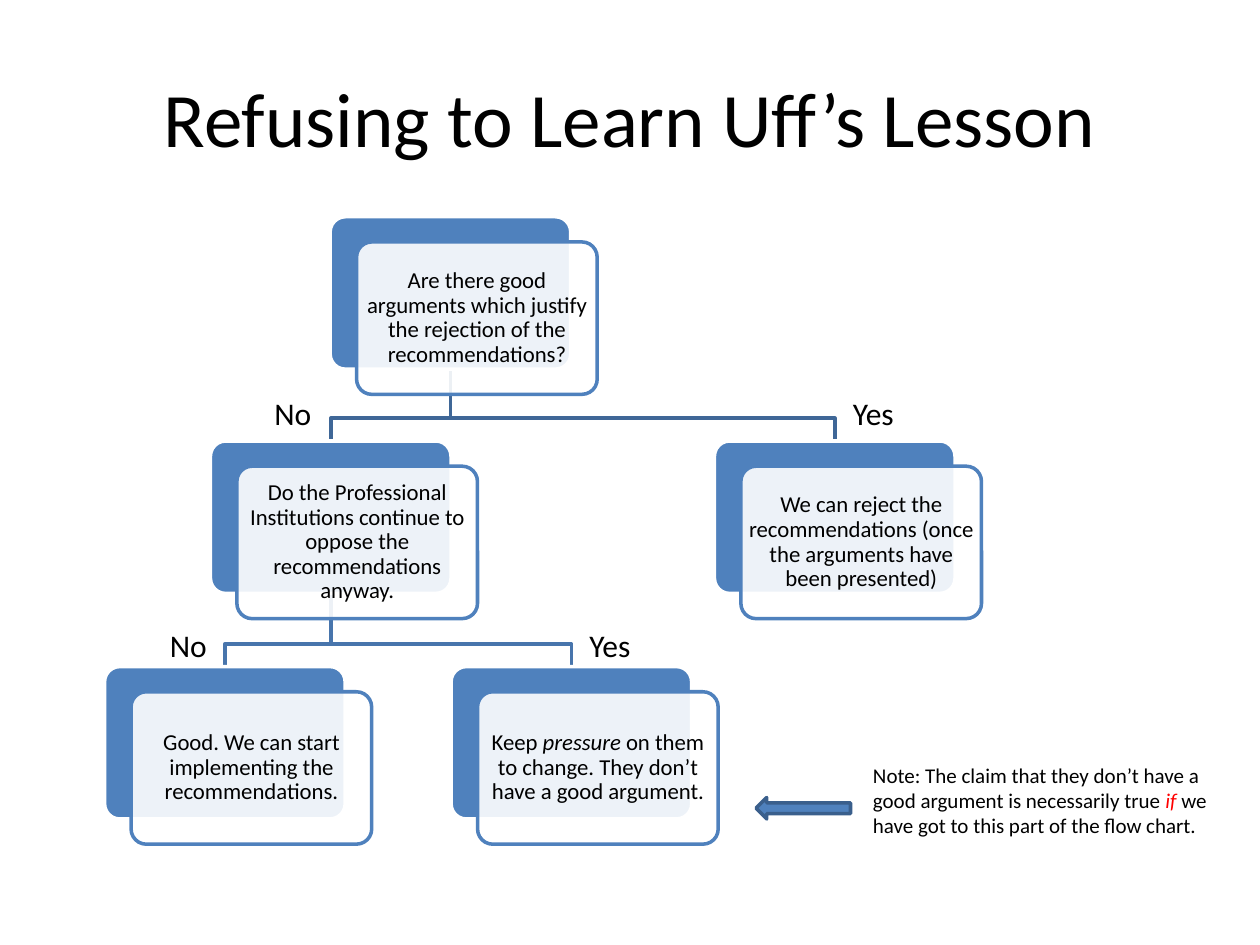
from lxml.etree import SubElement
from pptx import Presentation
from pptx.dml.color import RGBColor
from pptx.enum.shapes import MSO_SHAPE
from pptx.enum.text import MSO_ANCHOR, PP_ALIGN
from pptx.oxml.ns import qn
from pptx.util import Inches, Pt

BLUE, WHITE, BLACK, RED = "4F81BD", "FFFFFF", "000000", "FF0000"
CARD_W, CARD_H = 1.91, 1.21
OFFSET_X, OFFSET_Y = 0.21, 0.2
ROWS = [1.72, 3.5, 5.29]
STEM, DROP = 0.39, 0.18

# Each card: left, row, runs of text
CARDS = {
    "arguments": (2.62, 0, ["Are there good arguments which justify the rejection "
                            "of the recommendations?"]),
    "oppose": (1.67, 1, ["Do the Professional Institutions continue to oppose "
                         "the recommendations anyway."]),
    "start": (0.83, 2, ["Good. We can start implementing the recommendations."]),
    "pressure": (3.58, 2, ["Keep ", ("pressure", {"italic": True}),
                           " on them to change. They don’t have a good argument."]),
    "reject": (5.67, 1, ["We can reject the recommendations (once the arguments "
                         "have been presented)"]),
}
BRANCHES = [("arguments", "reject", "3F6797"), ("oppose", "pressure", "4875AC"),
            ("oppose", "start", "4875AC"), ("arguments", "oppose", "3F6797")]
ANSWERS = [("Yes", 6.67, 3.08, 1.17), ("No", 2.08, 3.08, 0.5),
           ("Yes", 4.58, 4.92, 1.17), ("No", 1.25, 4.92, 0.5)]


def color(value):
    return RGBColor.from_string(value)


def write(tf, runs, size, frame=None, para=None):
    """Fill a text frame; a run is a string or (string, font values)."""
    tf.word_wrap = True
    for name, value in (frame or {}).items():
        setattr(tf, name, value)
    p = tf.paragraphs[0]
    for name, value in (para or {}).items():
        setattr(p, name, value)
    for run in runs:
        text, fmt = run if isinstance(run, tuple) else (run, {})
        fmt = {"name": "Calibri", "size": Pt(size), "color": BLACK, **fmt}
        r = p.add_run()
        r.text = text
        r.font.color.rgb = color(fmt.pop("color"))
        for name, value in fmt.items():
            setattr(r.font, name, value)


def add_text(s, box, runs, size, frame=None, para=None):
    tb = s.shapes.add_textbox(*map(Inches, box))
    write(tb.text_frame, runs, size, frame, para)


def style(sp, fill, line, alpha=None):
    sp.shadow.inherit = False
    if fill:
        sp.fill.solid()
        sp.fill.fore_color.rgb = color(fill)
    else:
        sp.fill.background()
    sp.line.color.rgb = color(line)
    sp.line.width = Pt(2)
    if alpha:
        clr = sp.fill._xPr.find(qn("a:solidFill"))[0]
        SubElement(clr, qn("a:alpha"), val=str(alpha * 1000))


def add_shape(s, kind, box, fill, line, alpha=None):
    sp = s.shapes.add_shape(kind, *map(Inches, box))
    style(sp, fill, line, alpha)
    return sp


def add_branch(s, parent, child, line):
    """Elbow from the bottom of one card to the top of another."""
    x1, x2 = (CARDS[name][0] + CARD_W / 2 for name in (parent, child))
    y1 = ROWS[CARDS[parent][1]] + CARD_H
    y2 = ROWS[CARDS[child][1]]
    bend = y2 - DROP
    points = [(Inches(x), Inches(y)) for x, y in
              [(x1, y1), (x1, bend), (x2, bend), (x2, y2)]]
    fb = s.shapes.build_freeform(*points[0])
    fb.add_line_segments(points[1:], close=False)
    style(fb.convert_to_shape(), None, line)


def add_card(s, left, row, runs):
    """Blue back plate with a translucent text plate in front."""
    top = ROWS[row]
    back = add_shape(s, MSO_SHAPE.ROUNDED_RECTANGLE,
                     (left, top, CARD_W, CARD_H), BLUE, WHITE)
    front = add_shape(s, MSO_SHAPE.ROUNDED_RECTANGLE,
                      (left + OFFSET_X, top + OFFSET_Y, CARD_W, CARD_H),
                      WHITE, BLUE, alpha=90)
    for sp in (back, front):
        sp.adjustments[0] = 0.1
    margins = {f"margin_{side}": Inches(0.02)
               for side in ("left", "top", "right", "bottom")}
    write(front.text_frame, runs, 13,
          {"vertical_anchor": MSO_ANCHOR.MIDDLE, **margins},
          {"alignment": PP_ALIGN.CENTER, "line_spacing": 0.9})


def main():
    prs = Presentation()
    prs.slide_width, prs.slide_height = Inches(10), Inches(7.5)
    s = prs.slides.add_slide(prs.slide_layouts[6])

    # Title
    add_text(s, (0.5, 0.3, 9, 1.25), ["Refusing to Learn Uff’s Lesson"], 44,
             {"vertical_anchor": MSO_ANCHOR.MIDDLE},
             {"alignment": PP_ALIGN.CENTER})

    # Flow chart: branches lie behind the cards
    for branch in BRANCHES:
        add_branch(s, *branch)
    for card in CARDS.values():
        add_card(s, *card)

    # Answers beside the branches
    for text, left, top, width in ANSWERS:
        add_text(s, (left, top, width, 0.4), [text], 18)

    # Note with its arrow
    add_shape(s, MSO_SHAPE.LEFT_ARROW, (6, 6.33, 0.75, 0.17), BLUE, "3A5F8C")
    add_text(s, (6.83, 6, 2.92, 0.71),
             ["Note: The claim that they don’t have a good argument is "
              "necessarily true ",
              ("if", {"color": RED, "italic": True}),
              " we have got to this part of the flow chart."], 12)

    prs.save("out.pptx")


if __name__ == "__main__":
    main()
